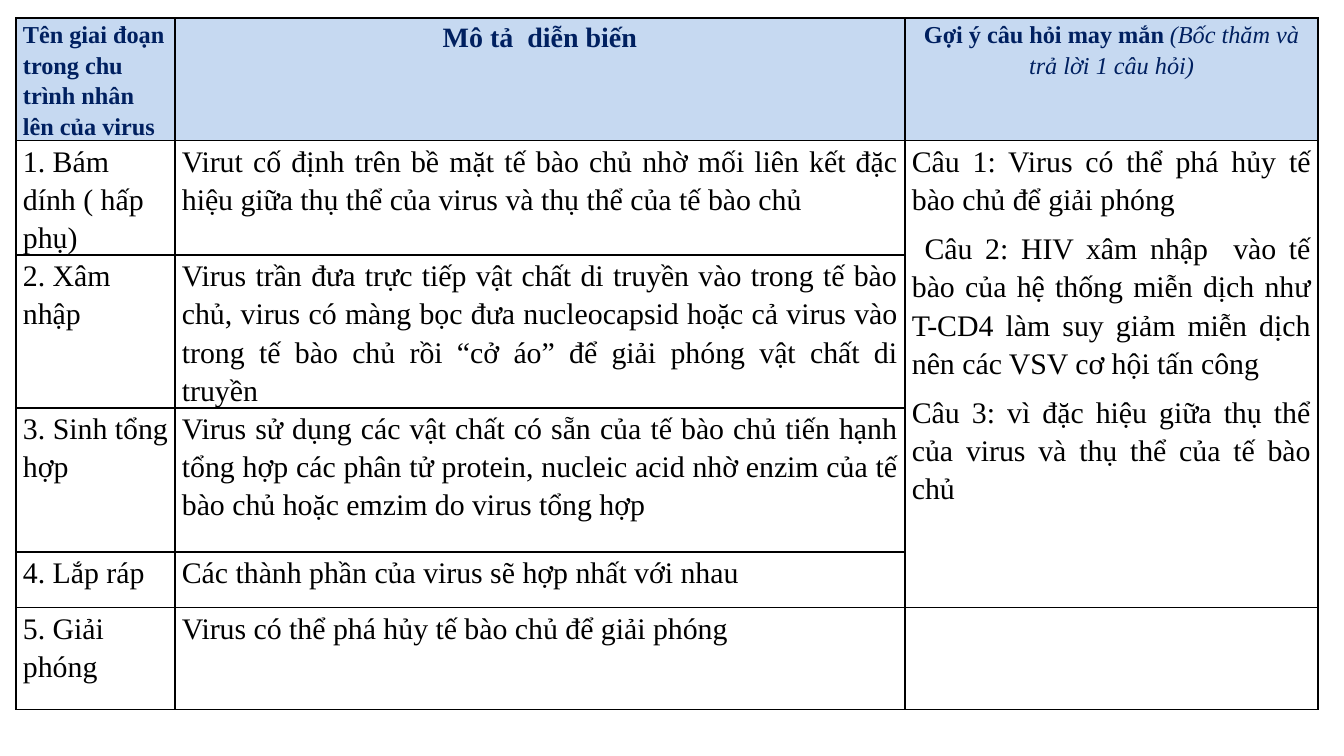
from lxml.etree import SubElement
from pptx import Presentation
from pptx.dml.color import RGBColor
from pptx.enum.text import PP_ALIGN as Align
from pptx.oxml.ns import qn
from pptx.util import Emu, Pt

PX = 914400 / 134.4
FONT = "Times New Roman"
NAVY = RGBColor(0x00, 0x20, 0x60)
BLACK = RGBColor(0, 0, 0)
PALE_BLUE = RGBColor(0xC6, 0xD9, 0xF1)

COL_WIDTHS = [159, 730, 413]
ROW_HEIGHTS = [113, 70, 117, 144, 56, 102]

# Stage, alignment of its name, description
STAGES = [
    ("1. Bám dính ( hấp phụ)", Align.LEFT,
     "Virut cố định trên bề mặt tế bào chủ nhờ mối liên kết đặc hiệu giữa "
     "thụ thể của virus và thụ thể của tế bào chủ"),
    ("2. Xâm nhập", Align.LEFT,
     "Virus trần đưa trực tiếp vật chất di truyền vào trong tế bào chủ, virus "
     "có màng bọc đưa nucleocapsid hoặc cả virus vào trong tế bào chủ rồi "
     "“cở áo” để giải phóng vật chất di truyền"),
    ("3. Sinh tổng hợp", Align.JUSTIFY,
     "Virus sử dụng các vật chất có sẵn của tế bào chủ tiến hạnh tổng hợp các "
     "phân tử protein, nucleic acid nhờ enzim của tế bào chủ hoặc emzim do "
     "virus tổng hợp"),
    ("4. Lắp ráp", Align.JUSTIFY,
     "Các thành phần của virus sẽ hợp nhất với nhau"),
    ("5. Giải phóng", Align.LEFT,
     "Virus có thể phá hủy tế bào chủ để giải phóng"),
]

QUESTIONS = [
    "Câu 1: Virus có thể phá hủy tế bào chủ để giải phóng",
    " Câu 2: HIV xâm nhập  vào tế bào của hệ thống miễn dịch như T-CD4 làm "
    "suy giảm miễn dịch nên các VSV cơ hội tấn công",
    "Câu 3: vì đặc hiệu giữa thụ thể của virus và thụ thể của tế bào chủ",
]


def px(n):
    return Emu(round(n * PX))


def add_run(p, text, size=16, color=BLACK, bold=False, italic=False):
    r = p.add_run()
    r.text = text
    f = r.font
    f.name, f.size, f.bold, f.italic = FONT, Pt(size), bold, italic
    f.color.rgb = color


def format_paragraph(p, align=Align.LEFT):
    p.alignment = align
    p.line_spacing = 1.15
    p.space_before = Pt(6)
    return p


def write(cell, *texts, align=Align.LEFT, **font):
    """Fill a cell with one paragraph per text."""
    tf = cell.text_frame
    for i, text in enumerate(texts):
        p = tf.add_paragraph() if i else tf.paragraphs[0]
        add_run(format_paragraph(p, align), text, **font)


def add_borders(cell):
    tc_pr = cell._tc.get_or_add_tcPr()
    for side in ("lnL", "lnR", "lnT", "lnB"):
        ln = SubElement(tc_pr, qn(f"a:{side}"), w=str(Pt(1)))
        fill = SubElement(ln, qn("a:solidFill"))
        SubElement(fill, qn("a:srgbClr"), val=str(BLACK))


def add_grid(s):
    """Add the empty bordered table with its header row filled."""
    frame = s.shapes.add_table(len(ROW_HEIGHTS), len(COL_WIDTHS), px(16), px(18),
                               px(sum(COL_WIDTHS)), px(sum(ROW_HEIGHTS)))
    table = frame.table
    table.first_row = table.horz_banding = False
    for col, width in zip(table.columns, COL_WIDTHS):
        col.width = px(width)
    for i, (row, height) in enumerate(zip(table.rows, ROW_HEIGHTS)):
        row.height = px(height)
        for cell in row.cells:
            cell.margin_left = cell.margin_right = px(7)
            cell.margin_top = cell.margin_bottom = 0
            add_borders(cell)
            if i == 0:
                cell.fill.solid()
                cell.fill.fore_color.rgb = PALE_BLUE
            else:
                cell.fill.background()
    return table


def write_header(table):
    write(table.cell(0, 0), "Tên giai đoạn trong chu trình nhân lên của virus",
          size=13, color=NAVY, bold=True)
    write(table.cell(0, 1), "Mô tả  diễn biến", align=Align.CENTER,
          size=15, color=NAVY, bold=True)
    hint = table.cell(0, 2)
    write(hint, "Gợi ý câu hỏi may mắn ", align=Align.CENTER,
          size=13, color=NAVY, bold=True)
    add_run(hint.text_frame.paragraphs[0], "(Bốc thăm và trả lời 1 câu hỏi)",
            size=13, color=NAVY, italic=True)


def write_stages(table):
    for i, (stage, align, description) in enumerate(STAGES, 1):
        write(table.cell(i, 0), stage, align=align)
        write(table.cell(i, 1), description, align=Align.JUSTIFY)


def write_questions(table):
    cell = table.cell(1, 2)
    cell.merge(table.cell(4, 2))
    write(cell, *QUESTIONS, align=Align.JUSTIFY)


def main():
    prs = Presentation()
    prs.slide_width, prs.slide_height = px(1344), px(756)
    s = prs.slides.add_slide(prs.slide_layouts[6])
    table = add_grid(s)
    write_header(table)
    write_stages(table)
    write_questions(table)
    prs.save("out.pptx")


if __name__ == "__main__":
    main()
